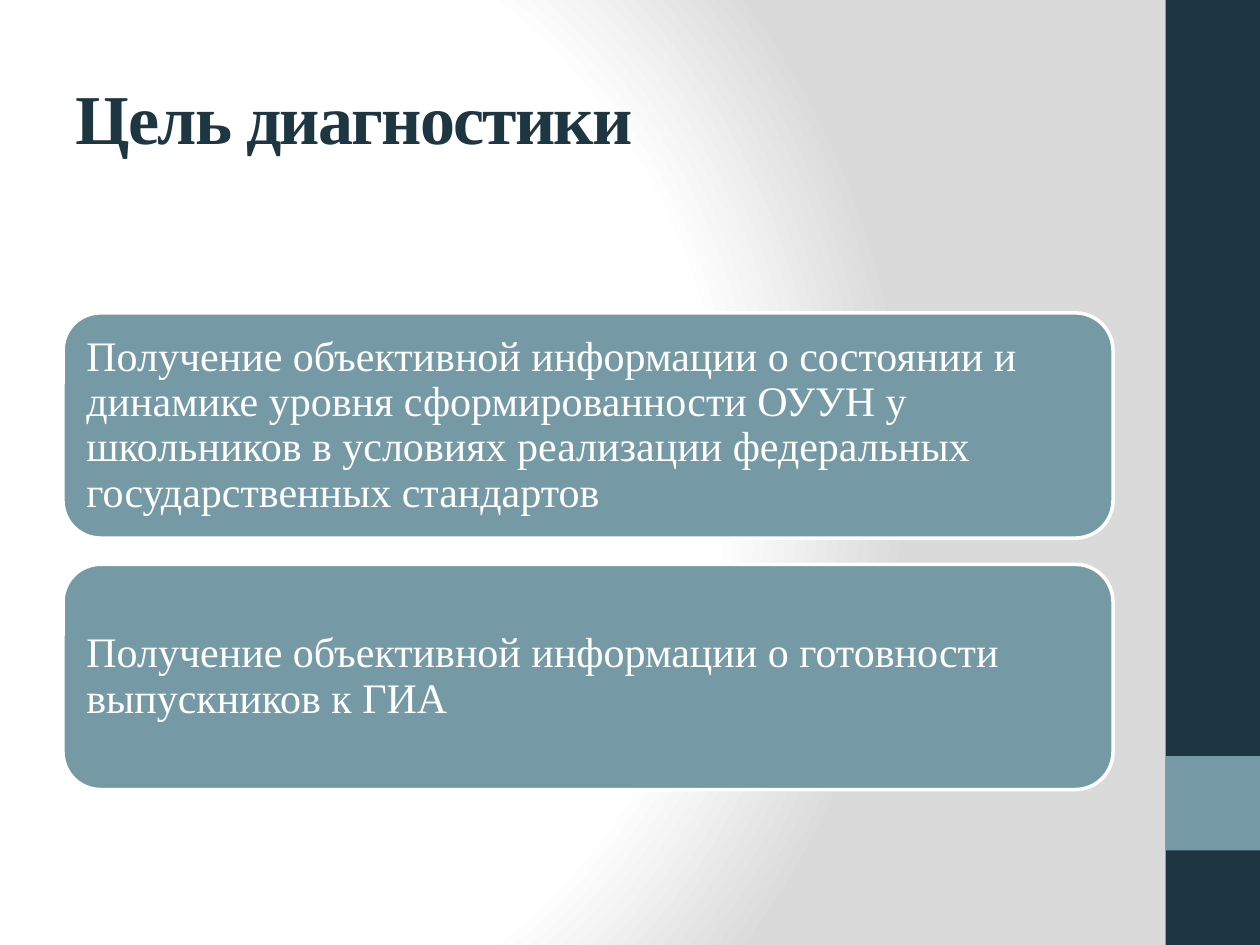
"""Build the slide on the aim of the diagnostics."""
from lxml.etree import fromstring
from pptx import Presentation
from pptx.dml.color import RGBColor
from pptx.enum.shapes import MSO_SHAPE
from pptx.enum.text import MSO_ANCHOR, PP_ALIGN
from pptx.util import Pt

TITLE = "Цель диагностики"
AIMS = [
    "Получение объективной информации о состоянии и динамике уровня "
    "сформированности ОУУН у школьников в условиях реализации "
    "федеральных государственных стандартов",
    "Получение объективной информации о готовности выпускников к ГИА",
]
HEX = {"dark": "1D3641", "teal": "759AA5", "white": "FFFFFF", "grey": "DADADA"}
BARS = [("dark", 0, 540), ("teal", 432, 54)]
LEFT, WIDE = 36, 600
TOP, TALL, STEP = 178.8, 128.7, 143.7
FRAME = {"word_wrap": True, "vertical_anchor": MSO_ANCHOR.MIDDLE,
         "margin_left": Pt(7.2), "margin_right": Pt(7.2),
         "margin_top": Pt(7.2), "margin_bottom": Pt(7.2)}
HEAD = {"name": "Times New Roman", "size": Pt(40), "bold": True}
BODY = {"name": "Times New Roman", "size": Pt(24), "bold": False}
NS = ('xmlns:a="http://schemas.openxmlformats.org/drawingml/2006/main" '
      'xmlns:p="http://schemas.openxmlformats.org/presentationml/2006/main"')
STOPS = [(0, "white"), (75, "white"), (100, "grey")]


def apply(item, form):
    for key, val in form.items():
        setattr(item, key, val)


def tint(name):
    return RGBColor.from_string(HEX[name])


def paint(slide):
    stops = "".join(f'<a:gs pos="{pos * 1000}"><a:srgbClr val="{HEX[name]}"/></a:gs>'
                    for pos, name in STOPS)
    back = fromstring(
        f'<p:bg {NS}><p:bgPr><a:gradFill rotWithShape="1"><a:gsLst>{stops}</a:gsLst>'
        '<a:path path="circle"><a:fillToRect l="20000" t="50000" r="100000" b="50000"/>'
        '</a:path></a:gradFill><a:effectLst/></p:bgPr></p:bg>')
    slide.element.cSld.insert(0, back)


def block(slide, kind, box, name):
    shape = slide.shapes.add_shape(kind, *map(Pt, box))
    shape.shadow.inherit = False
    shape.fill.solid()
    shape.fill.fore_color.rgb = tint(name)
    shape.line.fill.background()
    return shape


def write(shape, text, font, name):
    frame = shape.text_frame
    frame.text = text
    apply(frame, FRAME)
    para = frame.paragraphs[0]
    para.alignment = PP_ALIGN.LEFT
    para.line_spacing = 0.9 if font is BODY else 1.0
    run = para.runs[0]
    apply(run.font, font)
    run.font.color.rgb = tint(name)
    return run


def main():
    deck = Presentation()
    apply(deck, {"slide_width": Pt(720), "slide_height": Pt(540)})
    slide = deck.slides.add_slide(deck.slide_layouts[5])
    paint(slide)
    for name, top, tall in BARS:
        block(slide, MSO_SHAPE.RECTANGLE, (666, top, 54, tall), name)
    title = slide.shapes.title
    apply(title, {"left": Pt(LEFT), "top": Pt(21.6), "width": Pt(WIDE), "height": Pt(90)})
    run = write(title, TITLE, HEAD, "dark")
    run.font._element.set("spc", "-100")
    for row, aim in enumerate(AIMS):
        box = (LEFT, TOP + row * STEP, WIDE, TALL)
        card = block(slide, MSO_SHAPE.ROUNDED_RECTANGLE, box, "teal")
        card.line.color.rgb = tint("white")
        card.line.width = Pt(2)
        write(card, aim, BODY, "white")
    deck.save("out.pptx")


if __name__ == "__main__":
    main()
